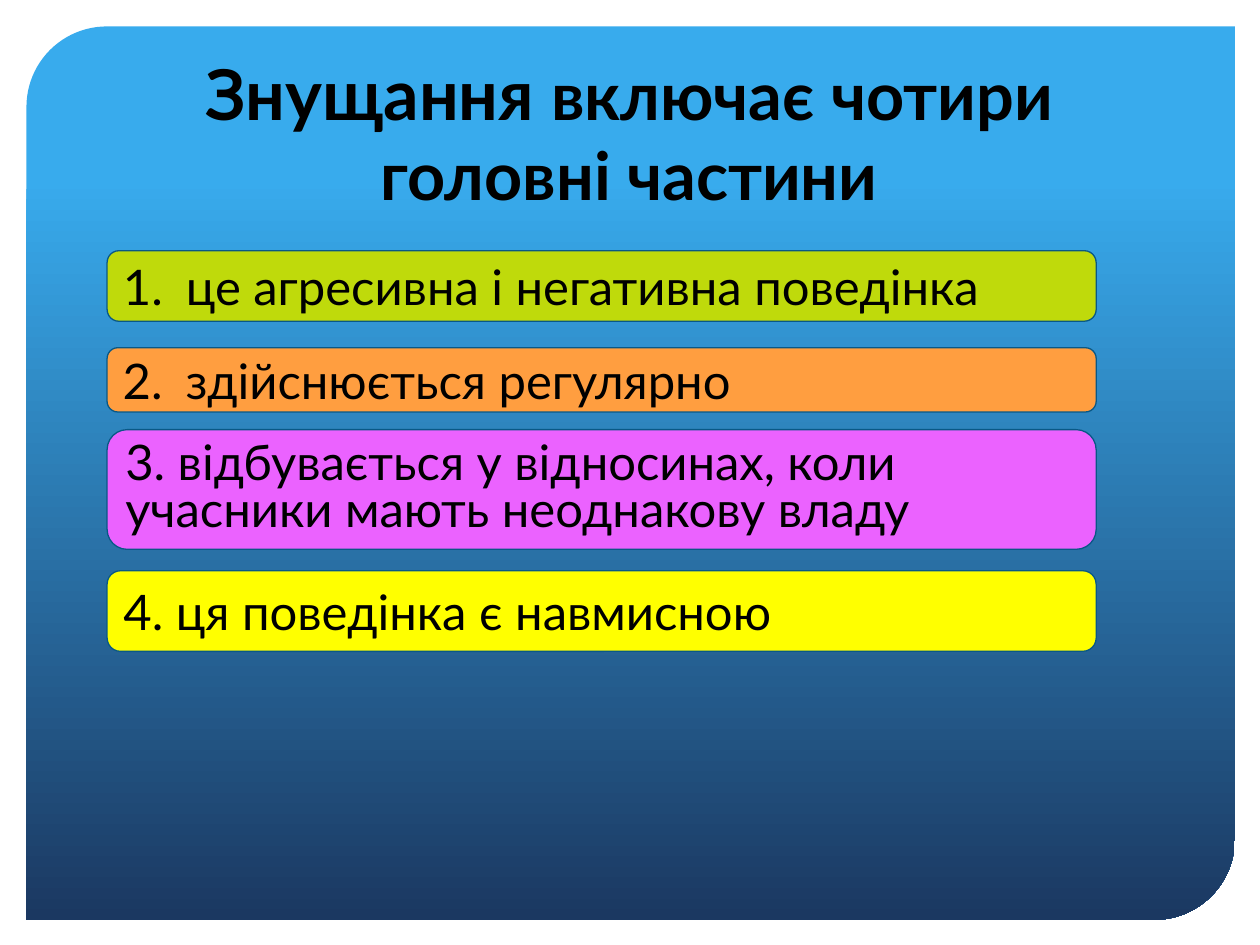
from dataclasses import dataclass
from typing import Optional

import lxml.etree
import pptx
import pptx.dml.color
import pptx.enum.shapes
import pptx.enum.text
import pptx.oxml.ns
import pptx.util
from pptx.util import Inches

Shapes = pptx.enum.shapes.MSO_SHAPE
Align = pptx.enum.text.PP_ALIGN
Anchor = pptx.enum.text.MSO_ANCHOR


@dataclass(frozen=True)
class Theme:
    font: str = "Lato"
    text: str = "000000"
    outline: str = "095886"
    panel_top: str = "38ABED"
    panel_bottom: str = "1B3861"
    title_lead: int = 40
    title_rest: int = 38
    item: int = 28


@dataclass(frozen=True)
class Part:
    text: str
    top: float
    height: float
    fill: str
    number: Optional[int] = None
    line_spacing: float = 1.0


THEME = Theme()
LEFT = 0.85
PART_WIDTH = 7.85
NUMBER_INDENT = 0.5
PARTS = [
    Part("це агресивна і негативна поведінка", 1.99, 0.56, "BFDA0B", number=1),
    Part("здійснюється регулярно", 2.76, 0.51, "FF9E40", number=2),
    Part("3. відбувається у відносинах, коли учасники мають неоднакову владу",
         3.41, 0.95, "EB62FF", line_spacing=0.8),
    Part("4. ця поведінка є навмисною", 4.53, 0.64, "FFFF00"),
]


def color(code: str) -> pptx.dml.color.RGBColor:
    return pptx.dml.color.RGBColor.from_string(code)


def add_text(para, text: str, *, size: int, bold: bool = False) -> None:
    span = para.add_run()
    span.text = text
    span.font.name = THEME.font
    span.font.size = pptx.util.Pt(size)
    span.font.bold = bold
    span.font.color.rgb = color(THEME.text)


def number_paragraph(para, start: int) -> None:
    properties = para._p.get_or_add_pPr()
    indent = Inches(NUMBER_INDENT)
    properties.set("marL", str(indent))
    properties.set("indent", str(-indent))
    lxml.etree.SubElement(
        properties, pptx.oxml.ns.qn("a:buFont"), typeface=THEME.font)
    lxml.etree.SubElement(
        properties, pptx.oxml.ns.qn("a:buAutoNum"),
        type="arabicPeriod", startAt=str(start))


def add_panel(page) -> None:
    panel = page.shapes.add_shape(
        Shapes.ROUND_2_DIAG_RECTANGLE,
        Inches(0.21), Inches(0.21), Inches(9.59), Inches(7.09))
    panel.shadow.inherit = False
    panel.adjustments[0] = 0.09
    panel.adjustments[1] = 0
    panel.line.fill.background()
    panel.fill.gradient()
    panel.fill.gradient_angle = 270
    stops = [(0.17, THEME.panel_top), (1.0, THEME.panel_bottom)]
    for stop, (position, code) in zip(panel.fill.gradient_stops, stops):
        stop.position = position
        stop.color.rgb = color(code)
    page.shapes._spTree.insert(2, panel._element)


def add_title(page) -> None:
    title = page.shapes.title
    title.left, title.top = Inches(LEFT), Inches(0.61)
    title.width, title.height = Inches(8.29), Inches(1.14)
    frame = title.text_frame
    frame.auto_size = pptx.enum.text.MSO_AUTO_SIZE.NONE
    frame.word_wrap = True
    frame.vertical_anchor = Anchor.BOTTOM
    para = frame.paragraphs[0]
    para.alignment = Align.CENTER
    add_text(para, "Знущання ", size=THEME.title_lead, bold=True)
    add_text(para, "включає чотири головні частини",
             size=THEME.title_rest, bold=True)


def add_part(page, part: Part) -> None:
    box = page.shapes.add_shape(
        Shapes.ROUNDED_RECTANGLE, Inches(LEFT), Inches(part.top),
        Inches(PART_WIDTH), Inches(part.height))
    box.shadow.inherit = False
    box.fill.solid()
    box.fill.fore_color.rgb = color(part.fill)
    box.line.color.rgb = color(THEME.outline)
    box.line.width = pptx.util.Pt(0.75)
    frame = box.text_frame
    frame.word_wrap = True
    frame.vertical_anchor = Anchor.MIDDLE
    para = frame.paragraphs[0]
    para.alignment = Align.LEFT
    para.line_spacing = part.line_spacing
    if part.number is not None:
        number_paragraph(para, part.number)
    add_text(para, part.text, size=THEME.item)


def main() -> None:
    deck = pptx.Presentation()
    deck.slide_width, deck.slide_height = Inches(10), Inches(7.5)
    page = deck.slides.add_slide(deck.slide_layouts.get_by_name("Title Only"))
    add_panel(page)
    add_title(page)
    for part in PARTS:
        add_part(page, part)
    deck.save("out.pptx")


if __name__ == "__main__":
    main()
